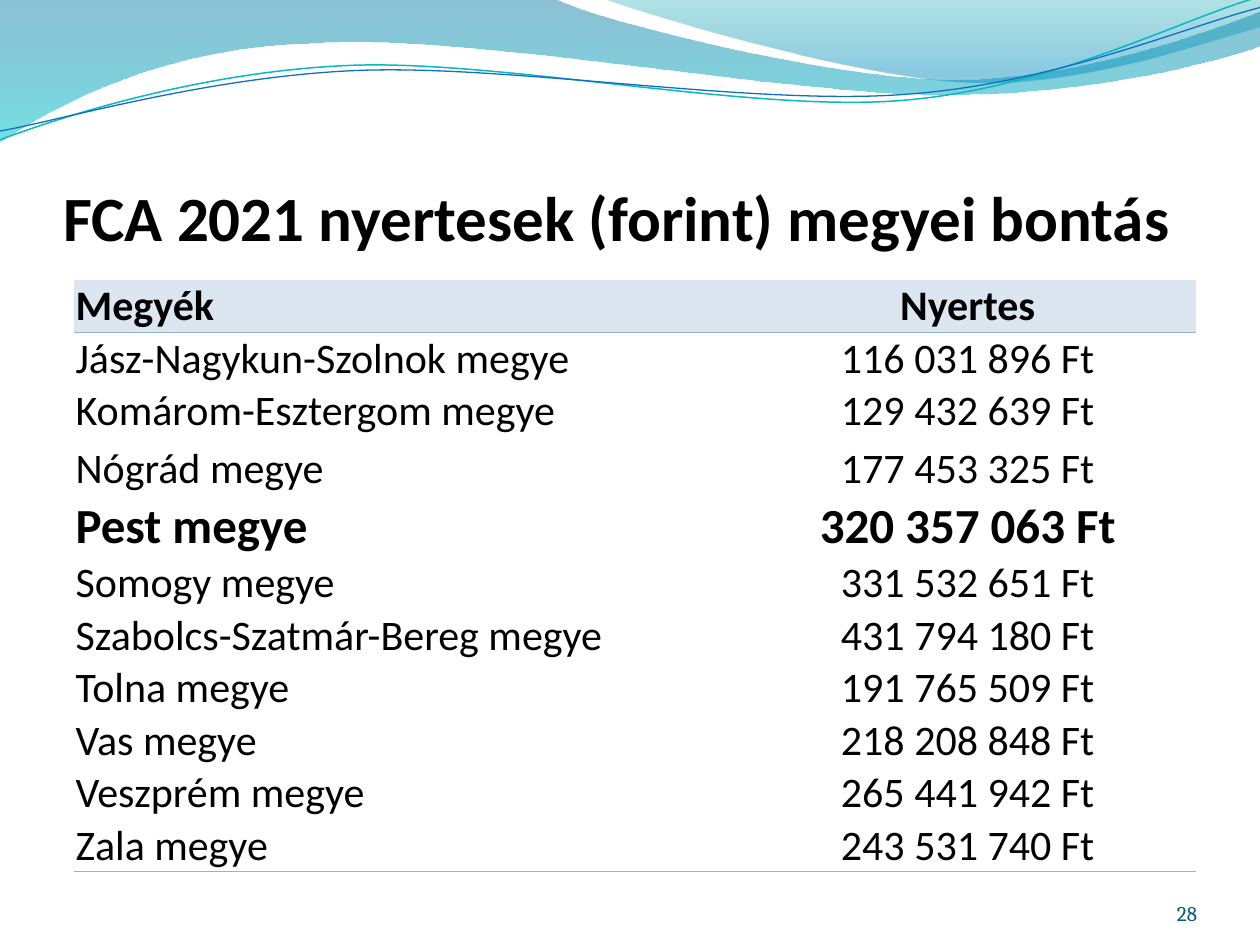
"""Build the slide listing the 2021 FCA winners by county in forints."""
from lxml.etree import SubElement
from pptx import Presentation
from pptx.dml.color import RGBColor
from pptx.enum.text import MSO_ANCHOR as Anchor, MSO_AUTO_SIZE as AutoSize, PP_ALIGN as Align
from pptx.oxml import parse_xml
from pptx.oxml.ns import nsdecls, qn
from pptx.util import Inches, Pt


def color(hex_string):
    """Return the colour for a hex string."""
    return RGBColor.from_string(hex_string)


def add_wave(slide, start, segments, close):
    """Draw lines (one point) and Bezier curves (three points) on the slide's master."""
    builder = slide.shapes.build_freeform(Inches(start[0]), Inches(start[1]))
    points = [(Inches(x), Inches(y)) for segment in segments for x, y in segment]
    builder.add_line_segments(points, close=close)
    shape = builder.convert_to_shape()
    shape.shadow.inherit = False
    lines = iter(list(shape._element.iter(qn("a:lnTo"))))
    for segment in segments:
        group = [next(lines) for _ in segment]
        if len(group) == 3:
            curve = parse_xml(f'<a:cubicBezTo {nsdecls("a")}/>')
            group[0].addprevious(curve)
            for line in group:
                curve.append(line[0])
                line.getparent().remove(line)
    tree = slide.slide_layout.slide_master.shapes._spTree
    shape._element.nvSpPr.cNvPr.set("id", str(100 + len(tree)))
    tree.append(shape._element)
    return shape


presentation = Presentation()
presentation.slide_width, presentation.slide_height = Inches(10), Inches(7.5)
slide = presentation.slides.add_slide(presentation.slide_layouts[5])

bands = [
    ((0, 0), [
        [(4.4, -0.01)],
        [(4.76, 0.17), (6.64, 0.63), (7.58, 0.63)],
        [(8.53, 0.63), (9.58, 0.26), (10, 0.09)],
        [(10.01, 0.36)],
        [(9.83, 0.44), (8.7, 0.76), (7.46, 0.75)],
        [(6.22, 0.75), (3.82, 0.28), (2.57, 0.34)],
        [(1.29, 0.36), (0.46, 0.83), (-0.01, 1.13)],
    ], [(0, "0074A1", 45), (1, "00C6CF", 55)]),
    ((4.79, -0.01), [
        [(5.09, 0.11), (6.82, 0.62), (7.69, 0.65)],
        [(8.56, 0.69), (9.61, 0.32), (10, 0.21)],
        [(10, 0)],
    ], [(0, "00A1A9", 30), (0.8, "008BBF", 45)]),
]
for start, segments, stops in bands:
    band = add_wave(slide, start, segments, True)
    band.line.fill.background()
    band.fill.gradient()
    band.fill.gradient_angle = 270
    for stop, (position, hex_string, opacity) in zip(band.fill.gradient_stops, stops):
        stop.position = position
        stop.color.rgb = color(hex_string)
    for element, (_, _, opacity) in zip(band._element.spPr.iter(qn("a:srgbClr")), stops):
        SubElement(element, qn("a:alpha"), val=str(opacity * 1000))

strands = [
    ((0, 1.11), [
        [(0.48, 0.93), (1.58, 0.57), (2.77, 0.52)],
        [(3.95, 0.47), (5.93, 0.89), (7.13, 0.8)],
        [(8.33, 0.71), (9.38, 0.15), (9.98, -0.02)],
    ], "0AB8BF", 0.85),
    ((0, 1.04), [
        [(0.47, 0.96), (1.64, 0.61), (2.83, 0.56)],
        [(4.03, 0.51), (5.97, 0.84), (7.17, 0.75)],
        [(8.36, 0.67), (9.41, 0.21), (10, 0.06)],
    ], "0F6FC6", 0.75),
]
for start, segments, hex_string, width in strands:
    strand = add_wave(slide, start, segments, False)
    strand.fill.background()
    strand.line.color.rgb = color(hex_string)
    strand.line.width = Pt(width)

title = slide.shapes.title
title.left, title.top, title.width, title.height = Inches(0.5), Inches(0.77), Inches(9), Inches(1.25)
frame = title.text_frame
frame.text = "FCA 2021 nyertesek (forint) megyei bontás"
frame.auto_size = AutoSize.NONE
frame.vertical_anchor = Anchor.BOTTOM
frame.margin_left = frame.margin_right = frame.margin_bottom = 0
frame.margin_top = Inches(0.05)
frame.paragraphs[0].alignment = Align.LEFT
font = frame.paragraphs[0].runs[0].font
font.name, font.size, font.bold = "Calibri", Pt(36), True
font.color.rgb = color("000000")

rows = [
    ("Megyék", "Nyertes"),
    ("Jász-Nagykun-Szolnok megye", "116 031 896 Ft"),
    ("Komárom-Esztergom megye", "129 432 639 Ft"),
    ("Nógrád megye", "177 453 325 Ft"),
    ("Pest megye", "320 357 063 Ft"),
    ("Somogy megye", "331 532 651 Ft"),
    ("Szabolcs-Szatmár-Bereg megye", "431 794 180 Ft"),
    ("Tolna megye", "191 765 509 Ft"),
    ("Vas megye", "218 208 848 Ft"),
    ("Veszprém megye", "265 441 942 Ft"),
    ("Zala megye", "243 531 740 Ft"),
]
row_heights = {3: 0.46, 6: 0.32}
header, highlight, last = 0, 4, len(rows) - 1
table = slide.shapes.add_table(len(rows), 2, Inches(0.59), Inches(2.22), Inches(8.9), Inches(4.63)).table
table.first_row = table.horz_banding = False
table._tbl.tblPr.find(qn("a:tableStyleId")).text = "{2D5ABB26-0587-4C30-8999-92F81FD0307C}"
table.columns[0].width, table.columns[1].width = Inches(5.28), Inches(3.62)
for row, texts in enumerate(rows):
    table.rows[row].height = Inches(row_heights.get(row, 0.38))
    for column, text in enumerate(texts):
        cell = table.cell(row, column)
        cell.text_frame.text = text
        cell.vertical_anchor = Anchor.BOTTOM
        cell.margin_left = cell.margin_right = cell.margin_top = Inches(0.01)
        cell.margin_bottom = 0
        paragraph = cell.text_frame.paragraphs[0]
        paragraph.alignment = Align.CENTER if column else Align.LEFT
        font = paragraph.runs[0].font
        font.name, font.size = "Calibri", Pt(28 if row == highlight else 24)
        font.bold = row in (header, highlight)
        font.color.rgb = color("000000")
        if row == header:
            cell.fill.solid()
            cell.fill.fore_color.rgb = color("DCE6F1")
        else:
            cell.fill.background()
        if row in (header, last):
            cell._tc.tcPr.insert(0, parse_xml(
                f'<a:lnB {nsdecls("a")} w="6350"><a:solidFill><a:srgbClr val="95B3D7"/></a:solidFill></a:lnB>'))

number_box = slide.shapes.add_textbox(Inches(8.67), Inches(6.95), Inches(0.83), Inches(0.4))
frame = number_box.text_frame
frame.text = "28"
frame.word_wrap = True
frame.vertical_anchor = Anchor.BOTTOM
frame.margin_left = frame.margin_right = frame.margin_top = frame.margin_bottom = 0
frame.paragraphs[0].alignment = Align.RIGHT
font = frame.paragraphs[0].runs[0].font
font.name, font.size = "Cambria", Pt(12)
font.color.rgb = color("045D75")

presentation.save("out.pptx")
